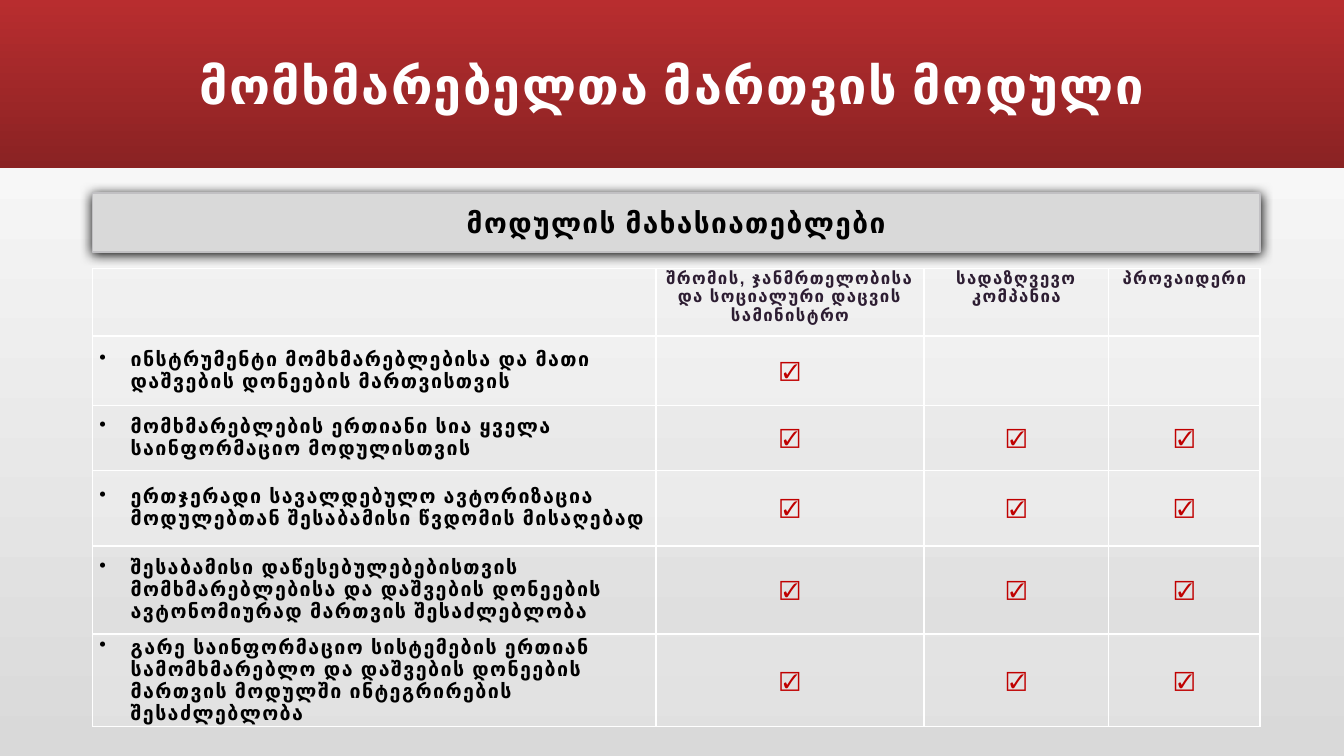
from pptx import Presentation
from pptx.dml.color import RGBColor as Rgb
from pptx.enum.shapes import MSO_SHAPE as Shape
from pptx.enum.text import MSO_ANCHOR as Anchor, PP_ALIGN as Align
from pptx.oxml import parse_xml
from pptx.oxml.ns import nsdecls
from pptx.util import Inches, Pt

WHITE = Rgb(0xFF, 0xFF, 0xFF)
BLACK = Rgb(0, 0, 0)
GREY = Rgb(0xD9, 0xD9, 0xD9)
EDGE = Rgb(0xC1, 0xC0, 0xC3)
RED = Rgb(0xB8, 0x2D, 0x2F)
DARK = Rgb(0x8A, 0x22, 0x23)
PLUM = Rgb(0x2D, 0x1D, 0x32)
TICK = Rgb(0xC0, 0, 0)

# The slide is a grid of 160 columns by 90 rows
COLS, ROWS = 160, 90
WIDTH, HEIGHT = Inches(13.33), Inches(7.5)

HEADS = ["", "შრომის, ჯანმრთელობისა და სოციალური დაცვის სამინისტრო",
         "სადაზღვევო კომპანია", "პროვაიდერი"]
# Feature and the number of users that have it
ITEMS = [
    ("ინსტრუმენტი მომხმარებლებისა და მათი დაშვების დონეების მართვისთვის", 1),
    ("მომხმარებლების ერთიანი სია ყველა საინფორმაციო მოდულისთვის", 3),
    ("ერთჯერადი სავალდებულო ავტორიზაცია მოდულებთან შესაბამისი წვდომის მისაღებად", 3),
    ("შესაბამისი დაწესებულებებისთვის მომხმარებლებისა და დაშვების დონეების "
     "ავტონომიურად მართვის შესაძლებლობა", 3),
    ("გარე საინფორმაციო სისტემების ერთიან სამომხმარებლო და დაშვების დონეების "
     "მართვის მოდულში ინტეგრირების შესაძლებლობა", 3),
]


def across(cols):
    return round(WIDTH * cols / COLS)


def down(rows):
    return round(HEIGHT * rows / ROWS)


def blend(fill, first, last, angle):
    fill.gradient()
    fill.gradient_angle = angle
    for stop, color in zip(fill.gradient_stops, (first, last)):
        stop.color.rgb = color


class Deck:
    head_font, body_font = "Karla", "Arial"

    def __init__(self):
        self.prs = Presentation()
        self.prs.slide_width, self.prs.slide_height = WIDTH, HEIGHT
        self.slide = self.prs.slides.add_slide(self.prs.slide_layouts[5])
        blend(self.slide.background.fill, GREY, WHITE, 90)

    def place(self, x, y, w, h):
        return across(x), down(y), across(w), down(h)

    def style(self, frame, text, size, color, font, align=Align.CENTER):
        frame.text = text
        frame.word_wrap = True
        para = frame.paragraphs[0]
        para.alignment = align
        for run in para.runs:
            run.font.size, run.font.name = Pt(size), font
            run.font.bold, run.font.color.rgb = True, color
            run.font._element.set("spc", "100")
        return para

    def title(self, text, *box):
        shape = self.slide.shapes.title
        shape.left, shape.top, shape.width, shape.height = self.place(*box)
        self.style(shape.text_frame, text, 36, WHITE, self.head_font)
        shape.text_frame.vertical_anchor = Anchor.MIDDLE

    def rect(self, *box):
        shape = self.slide.shapes.add_shape(Shape.RECTANGLE, *self.place(*box))
        shape.shadow.inherit = False
        return shape

    def band(self, *box):
        shape = self.rect(*box)
        blend(shape.fill, RED, DARK, 270)
        shape.line.fill.background()
        self.slide.shapes._spTree.insert(2, shape._element)

    def label(self, text, *box):
        shape = self.rect(*box)
        shape.fill.solid()
        shape.fill.fore_color.rgb = GREY
        shape.line.color.rgb, shape.line.width = EDGE, Pt(1)
        effects = shape._element.spPr.find("{*}effectLst")
        effects.append(parse_xml(
            f'<a:outerShdw {nsdecls("a")} blurRad="{Pt(8.5)}" dist="{Pt(1)}" '
            f'dir="5400000" algn="t" rotWithShape="0"><a:srgbClr val="{BLACK}"/></a:outerShdw>'))
        self.style(shape.text_frame, text, 20, BLACK, self.head_font)
        shape.text_frame.vertical_anchor = Anchor.MIDDLE

    def table(self, x, y, widths, heights):
        box = self.place(x, y, sum(widths), sum(heights))
        table = self.slide.shapes.add_table(len(heights), len(widths), *box).table
        table.first_row = table.horz_banding = False
        for col, width in zip(table.columns, widths):
            col.width = across(width)
        for row, height in zip(table.rows, heights):
            row.height = down(height)
        for num, row in enumerate(table.rows):
            for cell in row.cells:
                self.frame(cell, num)
        return table

    def frame(self, cell, num):
        cell.margin_left = cell.margin_right = Inches(0.07)
        cell.margin_top = cell.margin_bottom = 0
        cell.vertical_anchor = Anchor.MIDDLE if num else Anchor.TOP
        # Every second row has a faint white fill
        if num % 2:
            cell.fill.solid()
            cell.fill.fore_color.rgb = WHITE
            color = cell._tc.tcPr.find(".//{*}srgbClr")
            color.append(parse_xml(f'<a:alpha {nsdecls("a")} val="20000"/>'))
        else:
            cell.fill.background()
        # The rule below the heads is twice as thick
        thick = {"T": 2 if num == 1 else 1, "B": 1 if num else 2}
        for spot, side in enumerate("LRTB"):
            cell._tc.tcPr.insert(spot, parse_xml(
                f'<a:ln{side} {nsdecls("a")} w="{Pt(thick.get(side, 1))}"><a:solidFill>'
                f'<a:srgbClr val="{WHITE}"/></a:solidFill></a:ln{side}>'))

    def cell(self, cell, text, size, color):
        self.style(cell.text_frame, text, size, color, self.body_font)

    def bullet(self, cell, text):
        para = self.style(cell.text_frame, text, 14, BLACK, self.body_font, Align.LEFT)
        para.space_before = Pt(12)
        props = para._p.get_or_add_pPr()
        props.set("marL", str(Inches(0.31)))
        props.set("indent", str(-Inches(0.31)))
        props.append(parse_xml(f'<a:buChar {nsdecls("a")} char="•"/>'))


def main():
    deck = Deck()

    # Header
    deck.band(0, 0, COLS, 20)
    deck.title("მომხმარებელთა მართვის მოდული", 14, 0, 132, 20)
    deck.label("მოდულის მახასიათებლები", 11, 23, 139, 7)

    # Features by user
    table = deck.table(11, 32, [67.1, 31.9, 22, 18], [8, 8.3, 7.7, 9, 10.5, 11])
    for col, head in enumerate(HEADS):
        if head:
            deck.cell(table.cell(0, col), head, 12, PLUM)
    for row, (item, count) in enumerate(ITEMS, 1):
        deck.bullet(table.cell(row, 0), item)
        for col in range(1, count + 1):
            deck.cell(table.cell(row, col), "☑", 14, TICK)

    deck.prs.save("out.pptx")


if __name__ == "__main__":
    main()
